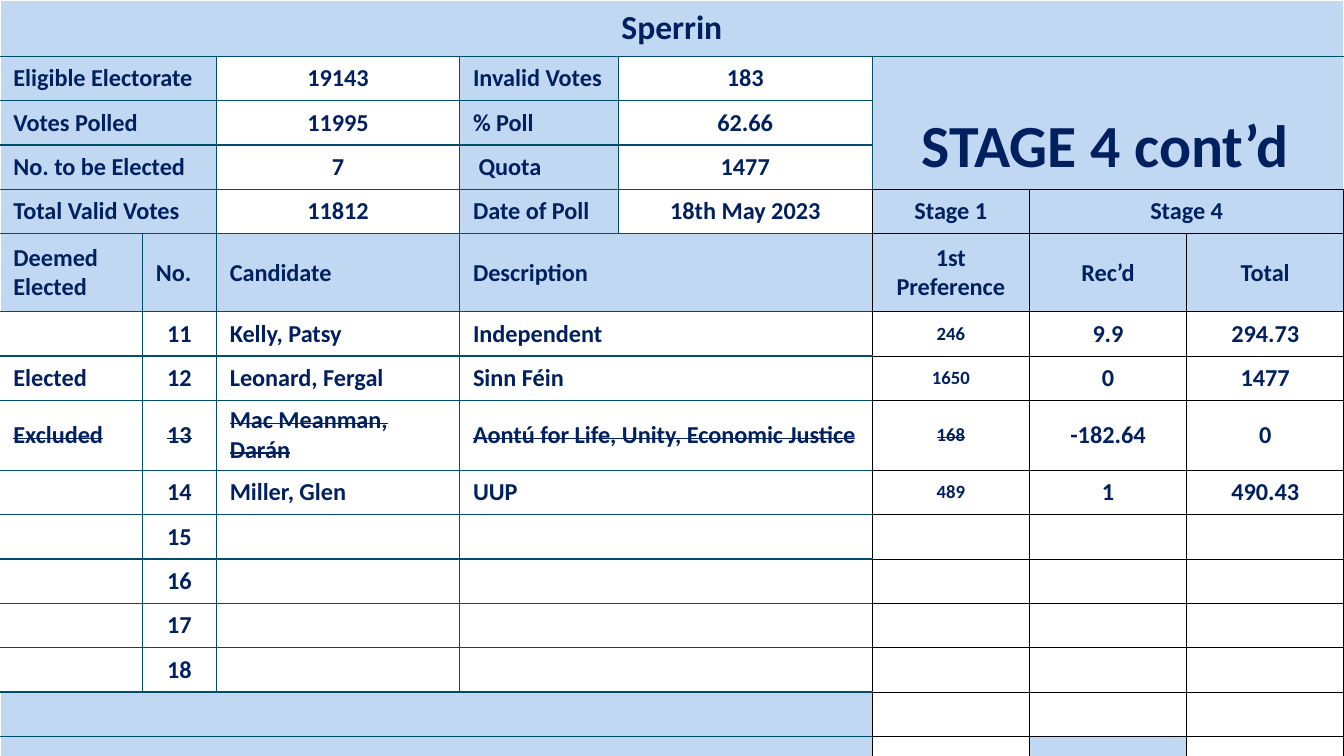
from lxml import etree
from pptx import Presentation
from pptx.dml.color import RGBColor
from pptx.enum.text import MSO_ANCHOR, PP_ALIGN
from pptx.oxml.ns import qn
from pptx.util import Inches, Pt

LEFT, CENTER = PP_ALIGN.LEFT, PP_ALIGN.CENTER
MIDDLE, BOTTOM = MSO_ANCHOR.MIDDLE, MSO_ANCHOR.BOTTOM
HARD_SPACE = chr(160)

THEME = {
    "font": "Calibri",
    "ink": RGBColor.from_string("002060"),
    "pale": RGBColor.from_string("C1D8F2"),
    "white": RGBColor.from_string("FFFFFF"),
    "backdrop": [(0.42, RGBColor.from_string("0D3868")), (0.82, RGBColor.from_string("8ADFFF"))],
    "title": 18, "stage": 32, "body": 13, "votes": 10,
}
EDGE = ("FFFFFF", 1)
TEAL = ("004E6C", 0.75)
BLACK = ("000000", 0.5)

COLUMNS = [1.06, 0.55, 1.81, 1.18, 1.89, 1.17, 1.17, 1.17]
TITLE_ROW, STAGE_ROW, COLUMN_HEADS, FIRST_CANDIDATE, EXCLUDED, FOOTER = 0, 1, 5, 6, 8, 14
FIRST_RESULT = 5
LINE = 0.33
ROWS = [0.42] + [LINE] * 4 + [0.58] + [LINE] * 10

CONTENT = [
    ["Sperrin"],
    ["Eligible Electorate", "", "19143", "Invalid Votes", "183", f"STAGE 4{HARD_SPACE}cont’d"],
    ["Votes Polled", "", "11995", "% Poll", "62.66"],
    ["No. to be Elected", "", "7", f"{HARD_SPACE}Quota", "1477"],
    ["Total Valid Votes", "", "11812", "Date of Poll", "18th May 2023", "Stage 1", "Stage 4"],
    ["Deemed Elected", "No.", "Candidate", "Description", "", "1st Preference", "Rec’d", "Total"],
    ["", "11", "Kelly, Patsy", "Independent", "", "246", "9.9", "294.73"],
    ["Elected", "12", "Leonard, Fergal", "Sinn Féin", "", "1650", "0", "1477"],
    ["Excluded", "13", "Mac Meanman, Darán", "Aontú for Life, Unity, Economic Justice", "",
     "168", "-182.64", "0"],
    ["", "14", "Miller, Glen", "UUP", "", "489", "1", "490.43"],
    ["", "15"], ["", "16"], ["", "17"], ["", "18"], [], [],
]


def vertical_edge(row, x):
    if x == 0 or (x == len(COLUMNS) and row < 4):
        return EDGE
    return TEAL if x < FIRST_RESULT or (x == FIRST_RESULT and row < 4) else BLACK


def horizontal_edge(y, column):
    if y == 0 or (y == len(ROWS) and column < FIRST_RESULT):
        return EDGE
    return TEAL if y == 1 or column < FIRST_RESULT else BLACK


deck = Presentation()
deck.slide_width = Inches(10)
deck.slide_height = deck.slide_width * 9 // 16
slide = deck.slides.add_slide(deck.slide_layouts[6])

backdrop = slide.background.fill
backdrop.gradient()
backdrop.gradient_angle = 258
for stop, (position, colour) in zip(backdrop.gradient_stops, THEME["backdrop"]):
    stop.position = position
    stop.color.rgb = colour

results = slide.shapes.add_table(
    len(ROWS), len(COLUMNS), 0, 0, deck.slide_width, Inches(5.8)).table
results.first_row = results.horz_banding = False
for column, width in zip(results.columns, COLUMNS):
    column.width = Inches(width)
for row, height in zip(results.rows, ROWS):
    row.height = Inches(height)

merges = [(TITLE_ROW, 0, TITLE_ROW, 7), (STAGE_ROW, 5, 3, 7), (4, 6, 4, 7)]
merges += [(r, 0, r, 1) for r in range(STAGE_ROW, COLUMN_HEADS)]
merges += [(r, 3, r, 4) for r in range(COLUMN_HEADS, FOOTER)]
merges += [(r, 0, r, 4) for r in range(FOOTER, len(ROWS))]
for top, left, bottom, right in merges:
    results.cell(top, left).merge(results.cell(bottom, right))

for r in range(len(ROWS)):
    for c in range(len(COLUMNS)):
        cell = results.cell(r, c)
        if cell.is_spanned:
            continue
        is_stage = (r, c) == (STAGE_ROW, FIRST_RESULT)
        format_values = {
            "margin_left": Inches(0.1), "margin_right": Inches(0.1),
            "margin_top": Inches(0.04), "margin_bottom": Inches(0.04),
            "vertical_anchor": BOTTOM if is_stage else MIDDLE,
        }
        for attribute, value in format_values.items():
            setattr(cell, attribute, value)

        borders = {
            "a:lnL": vertical_edge(r, c),
            "a:lnR": vertical_edge(r, c + cell.span_width),
            "a:lnT": horizontal_edge(r, c),
            "a:lnB": horizontal_edge(r + cell.span_height, c),
        }
        properties = cell._tc.get_or_add_tcPr()
        for side, (colour, weight) in borders.items():
            border = etree.SubElement(properties, qn(side), w=str(Pt(weight)))
            paint = etree.SubElement(border, qn("a:solidFill"))
            etree.SubElement(paint, qn("a:srgbClr"), val=colour)

        is_label = c in (0, 3) and r < COLUMN_HEADS
        is_heading = r == COLUMN_HEADS or (c >= FIRST_RESULT and r < COLUMN_HEADS)
        is_footer = r >= FOOTER and c == 0 or (r, c) == (len(ROWS) - 1, 6)
        cell.fill.solid()
        cell.fill.fore_color.rgb = THEME["pale" if is_label or is_heading or is_footer else "white"]

        if r == TITLE_ROW:
            size = THEME["title"]
        elif is_stage:
            size = THEME["stage"]
        elif c == FIRST_RESULT and r >= FIRST_CANDIDATE:
            size = THEME["votes"]
        else:
            size = THEME["body"]

        paragraph = cell.text_frame.paragraphs[0]
        is_centred = (r == TITLE_ROW or c >= 4 or (c == 2 and r < COLUMN_HEADS)
                      or (c == 1 and r > COLUMN_HEADS))
        paragraph.alignment = CENTER if is_centred else LEFT
        wording = CONTENT[r][c] if c < len(CONTENT[r]) else ""
        if not wording:
            etree.SubElement(paragraph._p, qn("a:endParaRPr"), sz=str(size * 100))
            continue
        pieces = [(wording, size)]
        if is_stage:
            pieces.append((HARD_SPACE, THEME["body"]))
        for piece, piece_size in pieces:
            run = paragraph.add_run()
            run.text = piece
            font_values = {"name": THEME["font"], "size": Pt(piece_size), "bold": True}
            for attribute, value in font_values.items():
                setattr(run.font, attribute, value)
            run.font.color.rgb = THEME["ink"]
            if r == EXCLUDED and c <= FIRST_RESULT:
                run.font._element.set("strike", "sngStrike")

deck.save("out.pptx")
